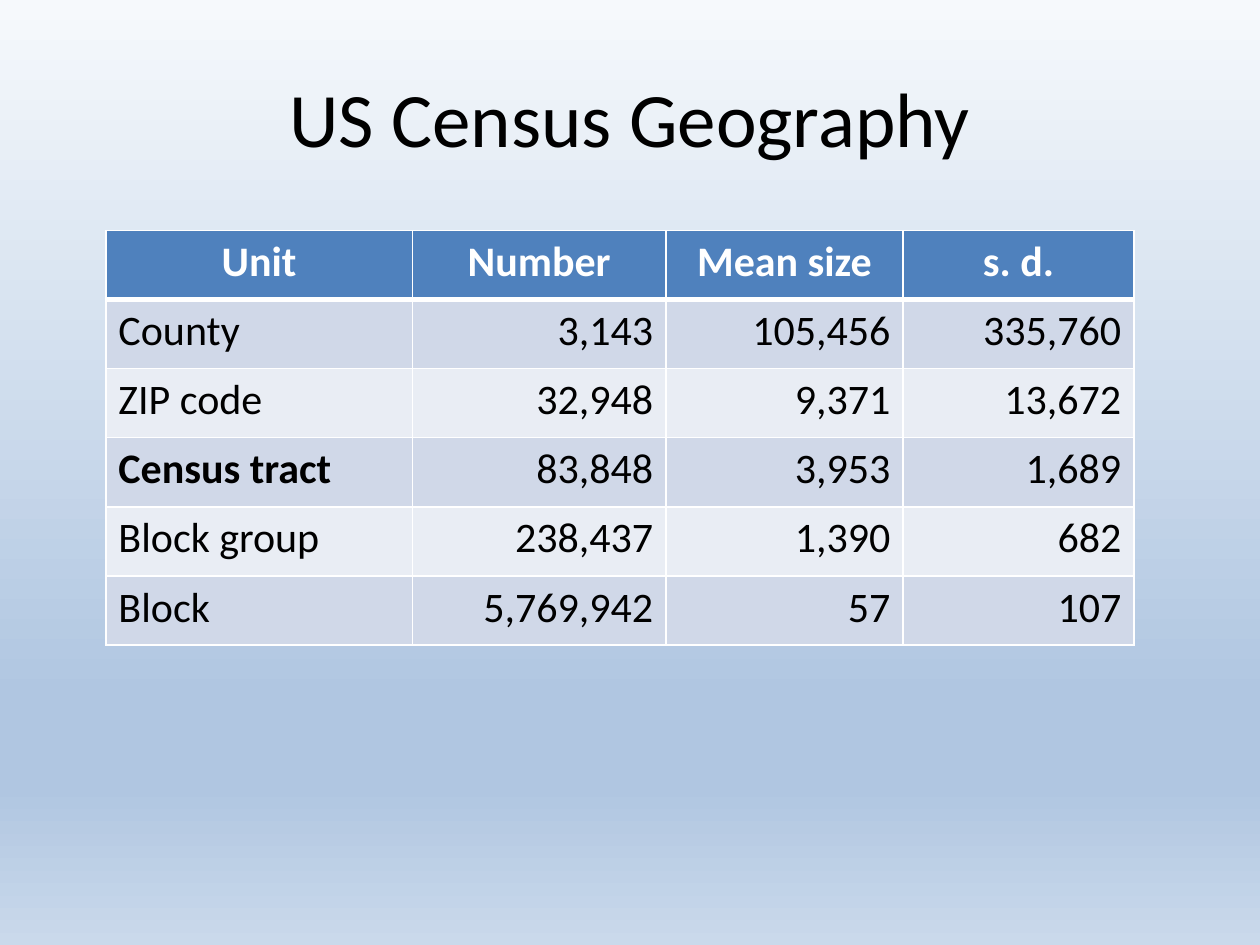
from pptx import Presentation
from pptx import util as u
from pptx.dml import color
from pptx.enum import text
from pptx.oxml import ns
from lxml import etree
from copy import deepcopy

ROWS = [
    ("Unit", "Number", "Mean size", "s. d."),
    ("County", "3,143", "105,456", "335,760"),
    ("ZIP code", "32,948", "9,371", "13,672"),
    ("Census tract", "83,848", "3,953", "1,689"),
    ("Block group", "238,437", "1,390", "682"),
    ("Block", "5,769,942", "57", "107"),
]
WIDTHS = (2.43, 2.01, 1.88, 1.83)
STOPS = [(0, "F6F9FC"), (0.74, "B0C6E1"), (0.83, "B0C6E1"), (1, "CAD9EB")]
ALIGN = text.PP_ALIGN


def rgb(code):
    """Return the colour for a hex string."""
    return color.RGBColor.from_string(code)


def style(para, size, code, bold, align):
    """Format a paragraph and its runs."""
    para.alignment = align
    for run in para.runs:
        font = run.font
        font.name, font.size, font.bold = "Calibri", u.Pt(size), bold
        font.color.rgb = rgb(code)


def paint(slide):
    """Fill the background with the vertical gradient."""
    fill = slide.background.fill
    fill.gradient()
    fill.gradient_angle = 270
    marks = slide.element.find(".//" + ns.qn("a:gsLst"))
    while len(marks) < len(STOPS):
        marks.append(deepcopy(marks[0]))
    for stop, (place, code) in zip(fill.gradient_stops, STOPS):
        stop.position = place
        stop.color.rgb = rgb(code)


def head(slide, left, top, width, height):
    """Place the slide title in the given box."""
    title = slide.shapes.title
    title.left, title.top = u.Inches(left), u.Inches(top)
    title.width, title.height = u.Inches(width), u.Inches(height)
    frame = title.text_frame
    frame.text = "US Census Geography"
    frame.vertical_anchor = text.MSO_ANCHOR.MIDDLE
    style(frame.paragraphs[0], 44, "000000", False, ALIGN.CENTER)


def border(cell, row):
    """Draw white cell borders, thicker below the header row."""
    props = cell._tc.get_or_add_tcPr()
    for side in "LRTB":
        thick = (side, row) in (("B", 0), ("T", 1))
        line = etree.SubElement(props, ns.qn("a:ln" + side), w=str(u.Pt(3 if thick else 1)))
        solid = etree.SubElement(line, ns.qn("a:solidFill"))
        etree.SubElement(solid, ns.qn("a:srgbClr"), val="FFFFFF")


def grid(slide, left, top, width, height):
    """Place the census table in the given box."""
    frame = slide.shapes.add_table(
        len(ROWS), len(WIDTHS),
        u.Inches(left), u.Inches(top), u.Inches(width), u.Inches(height))
    table = frame.table
    for col, share in zip(table.columns, WIDTHS):
        col.width = u.Inches(width * share / sum(WIDTHS))
    for r, row in enumerate(ROWS):
        for c, word in enumerate(row):
            cell = table.cell(r, c)
            border(cell, r)
            cell.fill.solid()
            cell.fill.fore_color.rgb = rgb(
                "4F81BD" if r == 0 else "D0D8E8" if r % 2 else "E9EDF4")
            cell.text_frame.text = word
            align = ALIGN.CENTER if r == 0 else ALIGN.RIGHT if c else ALIGN.LEFT
            style(cell.text_frame.paragraphs[0], 24,
                  "000000" if r else "FFFFFF",
                  r == 0 or word == "Census tract", align)


def main():
    """Build and save the slide."""
    deck = Presentation()
    deck.slide_width, deck.slide_height = u.Inches(10), u.Inches(7.5)
    slide = deck.slides.add_slide(deck.slide_layouts[5])
    paint(slide)
    head(slide, 0.5, 0.3, 9, 1.25)
    grid(slide, 0.84, 1.83, 8.16, 3.29)
    deck.save("out.pptx")


if __name__ == "__main__":
    main()
